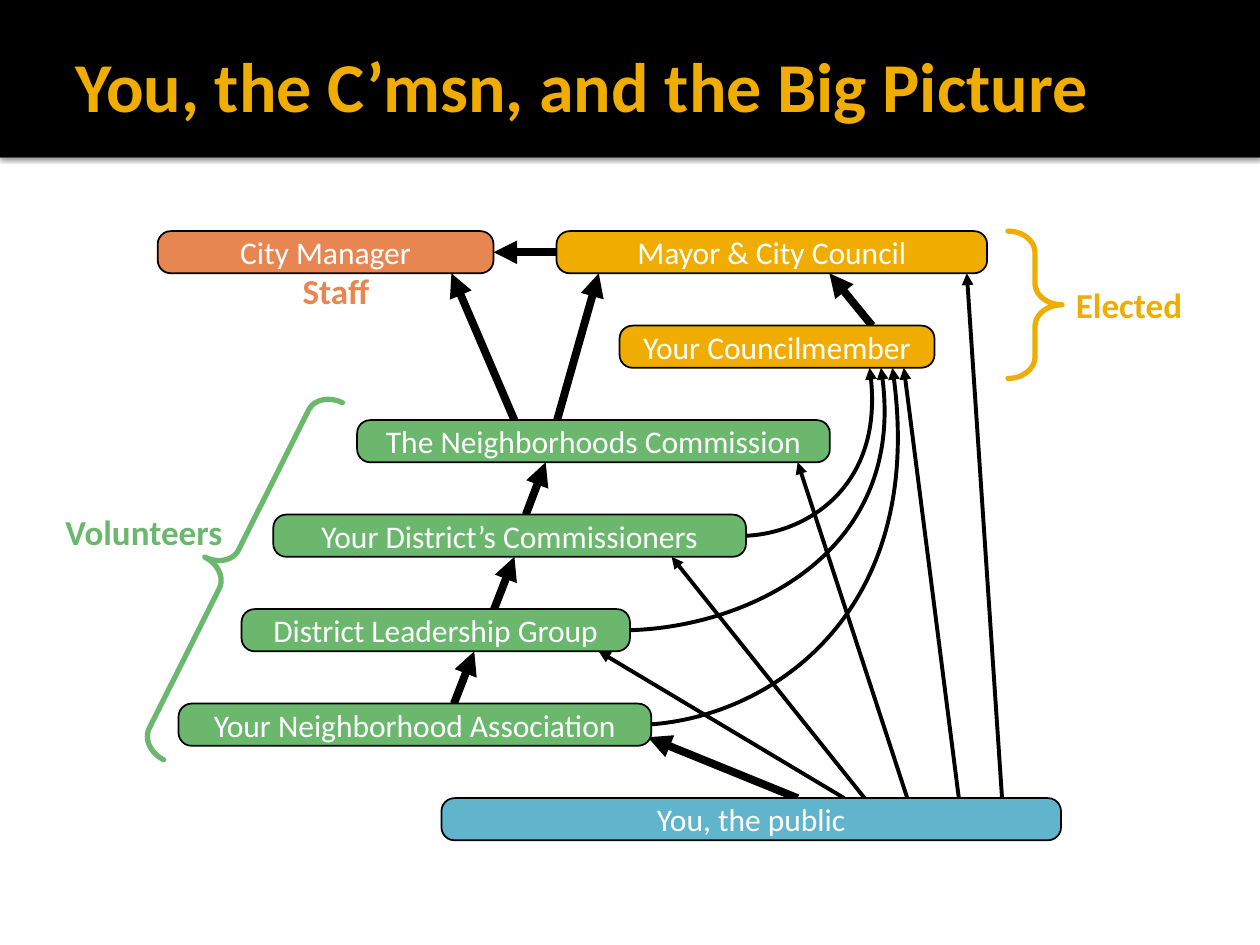
from lxml import etree
from pptx import Presentation
from pptx.dml.color import RGBColor
from pptx.enum import shapes as kinds, text as txt
from pptx.oxml.ns import qn
from pptx.util import Cm, Pt

BLACK, WHITE = "000000", "FFFFFF"
GOLD, ORANGE, GREEN, BLUE = "F0AD00", "E88651", "6BB76D", "60B5CC"
FONT = "Calibri"
THICK, THIN = 4.5, 2.25
BOX_HEIGHT = 0.85
ROW_PITCH = 11.43 / 6
COUNCIL, MEMBER, COMMISSION, COMMISSIONERS, LEADERSHIP, ASSOCIATION, PUBLIC = range(7)

# text, left, row, width, fill
BODIES = [
    ("You, the public", 5.72, PUBLIC, 12.49, BLUE),
    ("Your Neighborhood Association", 0.42, ASSOCIATION, 9.53, GREEN),
    ("District Leadership Group", 1.69, LEADERSHIP, 7.83, GREEN),
    ("Your District’s Commissioners", 2.33, COMMISSIONERS, 9.53, GREEN),
    ("The Neighborhoods Commission", 4.02, COMMISSION, 9.53, GREEN),
    ("Mayor & City Council", 8.04, COUNCIL, 8.68, GOLD),
    ("City Manager", 0, COUNCIL, 6.77, ORANGE),
    ("Your Councilmember", 9.31, MEMBER, 6.35, GOLD),
]

# start x, start row, end x, end row, width
ARROWS = [
    (12.9, PUBLIC, 9.88, ASSOCIATION - 0.09, THICK),
    (5.97, ASSOCIATION, 6.38, LEADERSHIP, THICK),
    (6.78, LEADERSHIP, 7.19, COMMISSIONERS, THICK),
    (7.42, COMMISSIONERS, 7.82, COMMISSION, THICK),
    (8.05, COMMISSION, 8.89, COUNCIL, THICK),
    (7.19, COMMISSION, 5.92, COUNCIL, THICK),
    (14.4, MEMBER, 13.54, COUNCIL, THICK),
    (13.84, PUBLIC, 8.89, LEADERSHIP, THIN),
    (14.25, PUBLIC, 10.36, COMMISSIONERS, THIN),
    (15.11, PUBLIC, 12.9, COMMISSION, THIN),
    (16.15, PUBLIC, 15.04, MEMBER, THIN),
    (17.02, PUBLIC, 16.31, COUNCIL, THIN),
]

# start x, start row, two control points, end x below the councilmember
CURVES = [
    (9.8, ASSOCIATION, (12.22, 9.85), (15.57, 7.77), 14.81),
    (9.53, LEADERSHIP, (11.91, 7.97), (15.19, 6.44), 14.58),
    (11.86, COMMISSIONERS, (13.06, 6.09), (14.71, 5.12), 14.35),
]


def rgb(value):
    return RGBColor.from_string(value)


def row_top(row):
    return row * ROW_PITCH


def row_bottom(row):
    return row_top(row) + BOX_HEIGHT


def style_text(frame, wording, size, color, bold=False, align=None):
    frame.text = wording
    paragraph = frame.paragraphs[0]
    paragraph.alignment = align
    font = paragraph.runs[0].font
    font.name, font.size, font.bold = FONT, Pt(size), bold
    font.color.rgb = rgb(color)


def style_line(item, color, width):
    item.line.color.rgb = rgb(color)
    item.line.width = Pt(width)
    return item._element.spPr.find(qn("a:ln"))


def add_arrowhead(item, width):
    outline = style_line(item, BLACK, width)
    etree.SubElement(outline, qn("a:tailEnd"), type="triangle")


def add_band(slide, top, height, color):
    band = slide.shapes.add_shape(
        kinds.MSO_SHAPE.RECTANGLE, 0, Cm(top), Cm(25.4), Cm(height))
    band.shadow.inherit = False
    band.fill.solid()
    band.fill.fore_color.rgb = rgb(color)
    band.line.fill.background()
    return band


def add_header(slide, wording):
    edge = add_band(slide, 3.05, 0.13, WHITE)
    effects = edge._element.spPr.find(qn("a:effectLst"))
    shadow = etree.SubElement(
        effects, qn("a:outerShdw"), blurRad=str(Pt(2.5)), dist=str(Pt(0.8)),
        dir="5400000", algn="tl", rotWithShape="0")
    shade = etree.SubElement(shadow, qn("a:srgbClr"), val=BLACK)
    etree.SubElement(shade, qn("a:alpha"), val="60000")
    add_band(slide, 0, 3.18, BLACK)

    title = slide.shapes.add_textbox(Cm(1.27), Cm(0.43), Cm(22.86), Cm(2.54))
    frame = title.text_frame
    frame.word_wrap = True
    frame.vertical_anchor = txt.MSO_ANCHOR.MIDDLE
    frame.margin_right = Cm(0.13)
    style_text(frame, wording, 40, GOLD, bold=True)


def add_arrow(slide, start, end, width):
    arrow = slide.shapes.add_connector(
        kinds.MSO_CONNECTOR.STRAIGHT, *map(Cm, start + end))
    add_arrowhead(arrow, width)
    etree.SubElement(arrow._element.spPr, qn("a:effectLst"))


def add_curved_arrow(slide, points):
    """Draw one cubic curve through start, two controls and end."""
    steps = 24
    trail = []
    for step in range(steps + 1):
        t = step / steps
        weights = ((1 - t) ** 3, 3 * t * (1 - t) ** 2, 3 * t * t * (1 - t), t ** 3)
        trail.append(tuple(
            Cm(sum(w * point[axis] for w, point in zip(weights, points)))
            for axis in (0, 1)))
    # The sampled trail sizes the shape; one true curve then takes its place.
    builder = slide.shapes.build_freeform(*trail[0])
    builder.add_line_segments(trail[1:], close=False)
    curve = builder.convert_to_shape()
    outline = next(curve._element.iter(qn("a:path")))
    for segment in outline.findall(qn("a:lnTo")):
        outline.remove(segment)
    bezier = etree.SubElement(outline, qn("a:cubicBezTo"))
    for x, y in points[1:]:
        etree.SubElement(bezier, qn("a:pt"),
                         x=str(Cm(x) - curve.left), y=str(Cm(y) - curve.top))
    curve.fill.background()
    curve.shadow.inherit = False
    add_arrowhead(curve, THIN)


def add_body(slide, left, top, width, wording, color):
    body = slide.shapes.add_shape(
        kinds.MSO_SHAPE.ROUNDED_RECTANGLE, Cm(left), Cm(top), Cm(width), Cm(BOX_HEIGHT))
    body.adjustments[0] = 0.31
    body.shadow.inherit = False
    body.fill.solid()
    body.fill.fore_color.rgb = rgb(color)
    style_line(body, BLACK, 1)
    body.text_frame.vertical_anchor = txt.MSO_ANCHOR.MIDDLE
    style_text(body.text_frame, wording, 18, WHITE, align=txt.PP_ALIGN.CENTER)


def add_brace(slide, kind, left, top, height, color, rotation=0):
    brace = slide.shapes.add_shape(kind, Cm(left), Cm(top), Cm(1.09), Cm(height))
    brace.adjustments[0] = 0.4
    brace.rotation = rotation
    brace.shadow.inherit = False
    brace.fill.background()
    style_line(brace, color, 3).set("cap", "rnd")


def add_group_label(slide, left, top, width, wording, color):
    label = slide.shapes.add_textbox(Cm(left), Cm(top), Cm(width), Cm(1.12))
    label.text_frame.word_wrap = False
    label.text_frame.auto_size = txt.MSO_AUTO_SIZE.SHAPE_TO_FIT_TEXT
    style_text(label.text_frame, wording, 20, color, bold=True)


def add_influence_map(slide, left, top):
    """Place the bodies, arrows and group labels from the City Manager's corner."""
    def at(x, y):
        return left + x, top + y

    for x1, row1, x2, row2, width in ARROWS:
        add_arrow(slide, at(x1, row_top(row1)), at(x2, row_bottom(row2)), width)
    for x1, row, control1, control2, x2 in CURVES:
        add_curved_arrow(slide, [
            at(x1, row_top(row) + BOX_HEIGHT / 2), at(*control1),
            at(*control2), at(x2, row_bottom(MEMBER))])
    add_arrow(slide, at(8.04, BOX_HEIGHT / 2), at(6.77, BOX_HEIGHT / 2), THICK)

    for wording, x, row, width, color in BODIES:
        add_body(slide, *at(x, row_top(row)), width, wording, color)

    add_group_label(slide, *at(-2.11, 5.5), 3.84, "Volunteers", GREEN)
    add_brace(slide, kinds.MSO_SHAPE.LEFT_BRACE, *at(0.89, 2.79), 8.05, GREEN, 26.6)
    add_brace(slide, kinds.MSO_SHAPE.RIGHT_BRACE, *at(17.14, 0), 2.97, GOLD)
    add_group_label(slide, *at(18.26, 0.93), 2.82, "Elected", GOLD)
    add_group_label(slide, *at(2.67, 0.65), 2.03, "Staff", ORANGE)


def main():
    deck = Presentation()
    deck.slide_width, deck.slide_height = Cm(25.4), Cm(19.05)
    slide = deck.slides.add_slide(deck.slide_layouts[6])
    add_header(slide, "You, the C’msn, and the Big Picture")
    add_influence_map(slide, 3.18, 4.66)
    deck.save("out.pptx")


if __name__ == "__main__":
    main()
